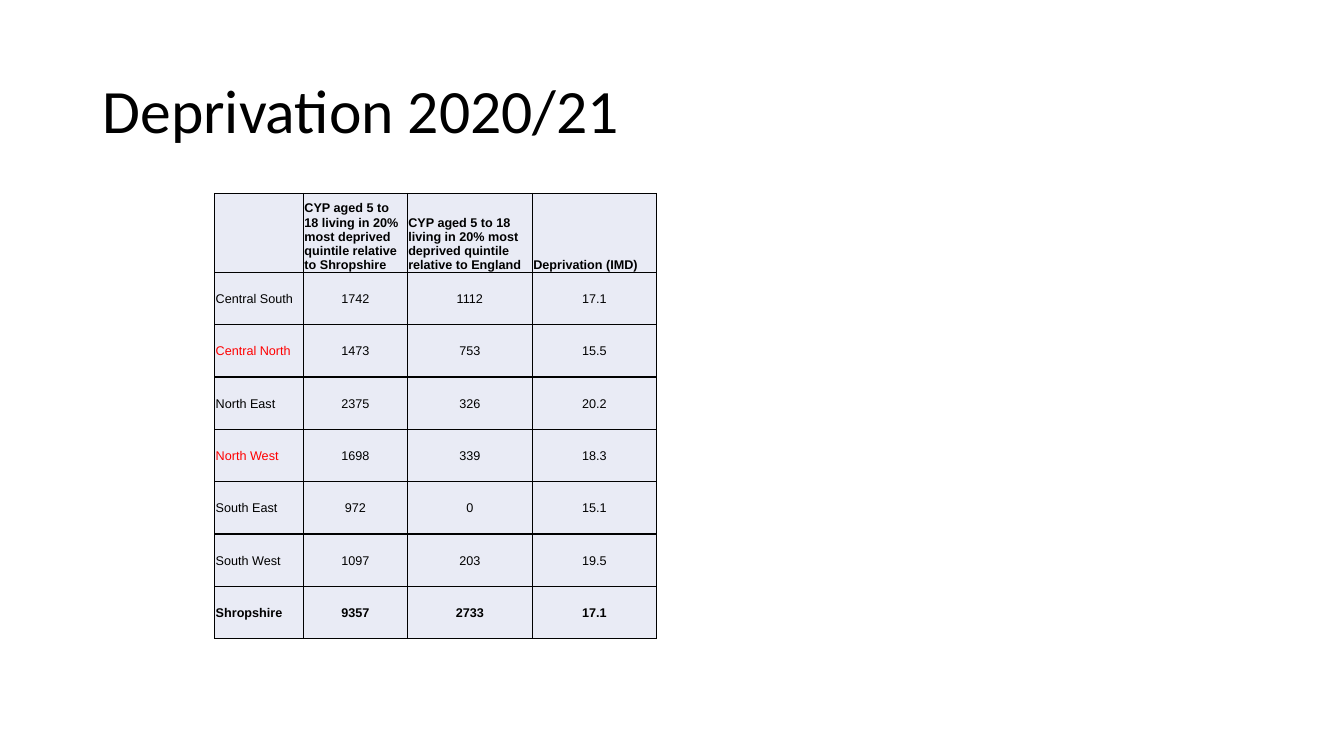
from pptx import Presentation
from pptx import util as u
from pptx.dml.color import RGBColor
from pptx.enum import text
from pptx.oxml import parse_xml
from pptx.oxml.ns import nsdecls

THEME = {
    "ink": "000000", "highlight": "FF0000", "cell": "E9EBF5",
    "title_font": "Calibri", "table_font": "Arial",
    "title_size": 44, "table_size": 9, "border": 1,
}

deck = Presentation()
deck.slide_width, deck.slide_height = u.Inches(13.33), u.Inches(7.5)
slide = deck.slides.add_slide(deck.slide_layouts[6])


def add_run(paragraph, words, font, size, color, bold=False):
    run = paragraph.add_run()
    run.text = words
    run.font.name, run.font.size, run.font.bold = font, u.Pt(size), bold
    run.font.color.rgb = RGBColor.from_string(color)


def add_borders(cell):
    properties = cell._tc.get_or_add_tcPr()
    for position, side in enumerate(("lnL", "lnR", "lnT", "lnB")):
        properties.insert(position, parse_xml(
            f'<a:{side} {nsdecls("a")} w="{u.Pt(THEME["border"])}"><a:solidFill>'
            f'<a:srgbClr val="{THEME["ink"]}"/></a:solidFill></a:{side}>'))


# Title
heading = slide.shapes.add_textbox(
    u.Inches(0.92), u.Inches(0.4), u.Inches(11.5), u.Inches(1.45)).text_frame
heading.word_wrap = True
heading.vertical_anchor = text.MSO_ANCHOR.MIDDLE
heading.paragraphs[0].line_spacing = 0.9
add_run(heading.paragraphs[0], "Deprivation 2020/21", THEME["title_font"],
        THEME["title_size"], THEME["ink"])

# Deprivation by area
areas = [
    ("", "CYP aged 5 to 18 living in 20% most deprived quintile relative to Shropshire",
     "CYP aged 5 to 18 living in 20% most deprived quintile relative to England",
     "Deprivation (IMD)"),
    ("Central South", "1742", "1112", "17.1"),
    ("Central North", "1473", "753", "15.5"),
    ("North East", "2375", "326", "20.2"),
    ("North West", "1698", "339", "18.3"),
    ("South East", "972", "0", "15.1"),
    ("South West", "1097", "203", "19.5"),
    ("Shropshire", "9357", "2733", "17.1"),
]
highlighted = {"Central North", "North West"}
column_widths = [0.88, 1.03, 1.24, 1.23]
row_heights = [0.78] + [0.52] * (len(areas) - 1)

deprivation = slide.shapes.add_table(
    len(areas), len(column_widths), u.Inches(2.13), u.Inches(1.92),
    u.Inches(sum(column_widths)), u.Inches(sum(row_heights))).table
deprivation.first_row = deprivation.horz_banding = False
for column, width in zip(deprivation.columns, column_widths):
    column.width = u.Inches(width)
for row, height in zip(deprivation.rows, row_heights):
    row.height = u.Inches(height)

# Cells: header and total rows are bold, figures are centred
for r, area in enumerate(areas):
    for c, words in enumerate(area):
        cell = deprivation.cell(r, c)
        cell.fill.solid()
        cell.fill.fore_color.rgb = RGBColor.from_string(THEME["cell"])
        add_borders(cell)
        cell.margin_left = cell.margin_right = cell.margin_top = u.Inches(0.01)
        cell.margin_bottom = 0
        cell.vertical_anchor = text.MSO_ANCHOR.MIDDLE if r else text.MSO_ANCHOR.BOTTOM
        paragraph = cell.text_frame.paragraphs[0]
        if r and c:
            paragraph.alignment = text.PP_ALIGN.CENTER
        if words:
            add_run(paragraph, words, THEME["table_font"], THEME["table_size"],
                    THEME["highlight" if words in highlighted else "ink"],
                    bold=r in (0, len(areas) - 1))

deck.save("out.pptx")
